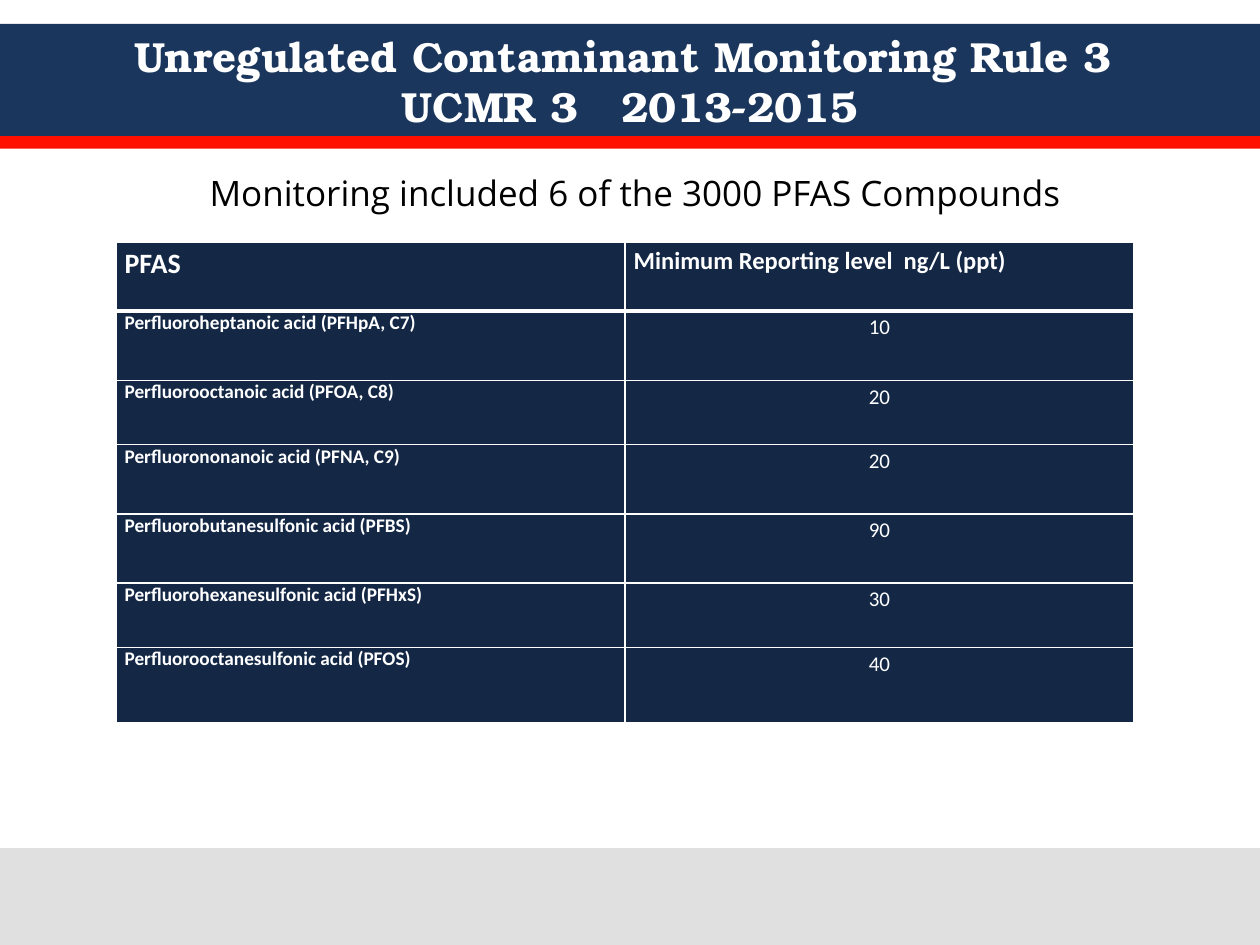
from dataclasses import dataclass

import pptx
import pptx.dml.color
import pptx.enum.shapes
import pptx.enum.text
import pptx.oxml
import pptx.oxml.ns
import pptx.util

Pt = pptx.util.Pt
ALIGN = pptx.enum.text.PP_ALIGN
ANCHOR = pptx.enum.text.MSO_ANCHOR
WHITE = "FFFFFF"
CELL_NAVY = "142846"


@dataclass
class Band:
    top: float
    height: float
    color: str


@dataclass
class Compound:
    name: str
    level: str
    row_height: float


BANDS = [
    Band(13.7, 64.1, "1B365D"),
    Band(77.8, 7.2, "FF0F00"),
    Band(484.6, 55.4, "E0E0E0"),
]

COMPOUNDS = [
    Compound("Perfluoroheptanoic acid (PFHpA, C7)", "10", 39.6),
    Compound("Perfluorooctanoic acid (PFOA, C8)", "20", 36.7),
    Compound("Perfluorononanoic acid (PFNA, C9)", "20", 39.6),
    Compound("Perfluorobutanesulfonic acid (PFBS)", "90", 39.6),
    Compound("Perfluorohexanesulfonic acid (PFHxS)", "30", 36.7),
    Compound("Perfluorooctanesulfonic acid (PFOS)", "40", 43.2),
]
HEADER_HEIGHT = 39.6


def rgb(color: str) -> pptx.dml.color.RGBColor:
    return pptx.dml.color.RGBColor.from_string(color)


def write_text(frame, text: str, *, size: float, font: str = "Calibri",
               color: str = WHITE, bold: bool = False, align=ALIGN.LEFT,
               line_spacing: float = 1.0) -> None:
    frame.word_wrap = True
    para = frame.paragraphs[0]
    para.text = text
    para.alignment = align
    para.line_spacing = line_spacing
    para.space_before = Pt(0)
    for span in para.runs:
        span.font.name = font
        span.font.size = Pt(size)
        span.font.bold = bold
        span.font.color.rgb = rgb(color)


def draw_band(page, band: Band, width: int) -> None:
    shape = page.shapes.add_shape(pptx.enum.shapes.MSO_SHAPE.RECTANGLE,
                                  0, Pt(band.top), width, Pt(band.height))
    shape.shadow.inherit = False
    shape.fill.solid()
    shape.fill.fore_color.rgb = rgb(band.color)
    shape.line.fill.background()


def set_borders(cell, top: float, bottom: float) -> None:
    properties = cell._tc.get_or_add_tcPr()
    widths = {"lnL": 1, "lnR": 1, "lnT": top, "lnB": bottom}
    for index, (side, width) in enumerate(widths.items()):
        properties.insert(index, pptx.oxml.parse_xml(
            f'<a:{side} {pptx.oxml.ns.nsdecls("a")} w="{Pt(width)}">'
            f'<a:solidFill><a:srgbClr val="{WHITE}"/></a:solidFill></a:{side}>'))


def fill_cell(cell, text: str, *, top: float = 1, bottom: float = 1, **text_format) -> None:
    cell.margin_left = cell.margin_right = Pt(5)
    cell.margin_top = cell.margin_bottom = 0
    cell.vertical_anchor = ANCHOR.TOP
    cell.fill.solid()
    cell.fill.fore_color.rgb = rgb(CELL_NAVY)
    set_borders(cell, top, bottom)
    write_text(cell.text_frame, text, **text_format)


def draw_title(page) -> None:
    title = page.shapes.title
    title.left, title.top, title.width, title.height = Pt(12), Pt(13.7), Pt(696), Pt(64.8)
    title.text_frame.vertical_anchor = ANCHOR.MIDDLE
    write_text(title.text_frame,
               "Unregulated Contaminant Monitoring Rule 3 \vUCMR 3   2013-2015",
               size=24, font="TeX Gyre Bonum", bold=True, align=ALIGN.CENTER)
    page.shapes._spTree.append(title._element)


def draw_subtitle(page) -> None:
    box = page.shapes.add_textbox(Pt(18), Pt(94.3), Pt(690), Pt(390))
    write_text(box.text_frame, "Monitoring included 6 of the 3000 PFAS Compounds",
               size=20, font="Open Sans", color="000000", align=ALIGN.CENTER)


def draw_table(page, compounds: list[Compound]) -> None:
    heights = [HEADER_HEIGHT] + [compound.row_height for compound in compounds]
    table = page.shapes.add_table(len(heights), 2, Pt(66.2), Pt(138.2),
                                  Pt(581.8), Pt(sum(heights))).table
    table.horz_banding = False
    for row, height in zip(table.rows, heights):
        row.height = Pt(height)
    headings = [("PFAS", 16), ("Minimum Reporting level  ng/L (ppt)", 14)]
    for column, (heading, size) in enumerate(headings):
        fill_cell(table.cell(0, column), heading, bottom=3, size=size,
                  bold=True, line_spacing=1.15)
    for index, compound in enumerate(compounds, start=1):
        top = 3 if index == 1 else 1
        fill_cell(table.cell(index, 0), compound.name, top=top, size=11, bold=True)
        fill_cell(table.cell(index, 1), compound.level, top=top, size=12,
                  align=ALIGN.CENTER, line_spacing=1.15)


def main() -> None:
    deck = pptx.Presentation()
    deck.slide_width, deck.slide_height = Pt(720), Pt(540)
    page = deck.slides.add_slide(deck.slide_layouts[5])
    for band in BANDS:
        draw_band(page, band, deck.slide_width)
    draw_title(page)
    draw_subtitle(page)
    draw_table(page, COMPOUNDS)
    deck.save("out.pptx")


if __name__ == "__main__":
    main()
